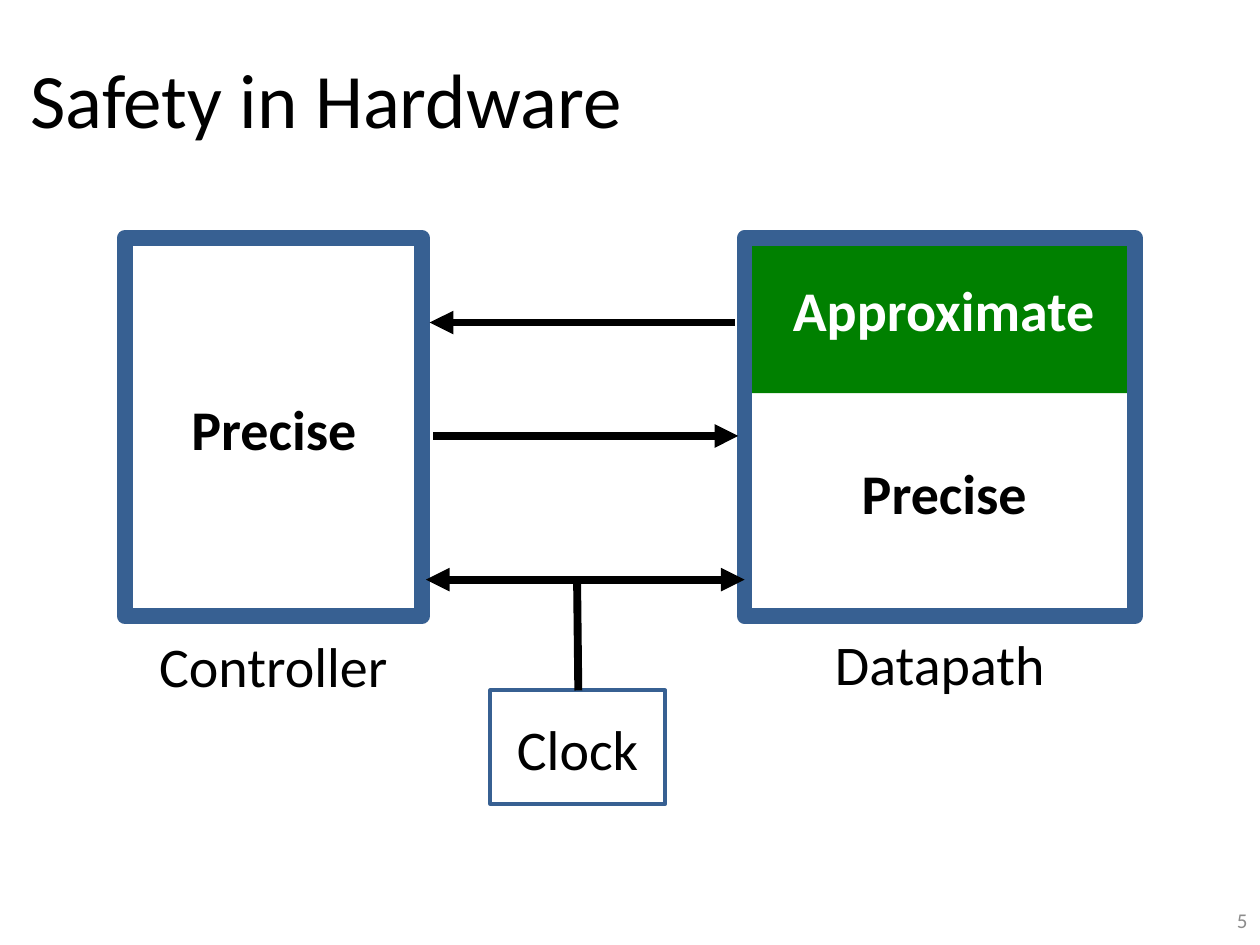
from pptx import Presentation
from pptx.dml.color import RGBColor
from pptx.enum.shapes import MSO_CONNECTOR, MSO_SHAPE
from pptx.enum.text import MSO_ANCHOR, PP_ALIGN
from pptx.oxml.ns import qn
from pptx.util import Pt
from lxml.etree import SubElement

PX = 9144
BLACK = RGBColor(0x00, 0x00, 0x00)
WHITE = RGBColor(0xFF, 0xFF, 0xFF)
GRAY = RGBColor(0x8C, 0x8C, 0x8C)
BLUE = RGBColor(0x37, 0x60, 0x92)
GREEN = RGBColor(0x00, 0x80, 0x00)


class Diagram:
    font = "Calibri"

    def __init__(self, slide):
        self.s = slide

    def fill_text(self, sp, text, size, color, align, anchor, bold=False, wrap=True):
        tf = sp.text_frame
        tf.word_wrap = wrap
        tf.vertical_anchor = anchor
        p = tf.paragraphs[0]
        p.alignment = align
        r = p.add_run()
        r.text = text
        r.font.name = self.font
        r.font.size = Pt(size)
        r.font.bold = bold
        r.font.color.rgb = color

    def title(self, text, x, y, w, h):
        sp = self.s.shapes.title
        sp.left, sp.top, sp.width, sp.height = (v * PX for v in (x, y, w, h))
        self.fill_text(sp, text, 44, BLACK, PP_ALIGN.LEFT, MSO_ANCHOR.MIDDLE)

    def text(self, text, x, y, w, h, size=32, color=BLACK, bold=False,
             align=PP_ALIGN.CENTER, anchor=MSO_ANCHOR.TOP, wrap=False):
        sp = self.s.shapes.add_textbox(x * PX, y * PX, w * PX, h * PX)
        self.fill_text(sp, text, size, color, align, anchor, bold, wrap)

    def box(self, x, y, w, h, fill=None, line=None):
        sp = self.s.shapes.add_shape(MSO_SHAPE.RECTANGLE, x * PX, y * PX, w * PX, h * PX)
        sp.shadow.inherit = False
        if fill is None:
            sp.fill.background()
        else:
            sp.fill.solid()
            sp.fill.fore_color.rgb = fill
        if line is None:
            sp.line.fill.background()
        else:
            sp.line.color.rgb = BLUE
            sp.line.width = Pt(line)

    def line(self, x1, y1, x2, y2, ends=()):
        sp = self.s.shapes.add_connector(
            MSO_CONNECTOR.STRAIGHT, x1 * PX, y1 * PX, x2 * PX, y2 * PX)
        sp.line.color.rgb = BLACK
        sp.line.width = Pt(4.5)
        spPr = sp._element.spPr
        ln = spPr.find(qn("a:ln"))
        for end in ends:
            SubElement(ln, qn(f"a:{end}"), type="triangle")
        SubElement(spPr, qn("a:effectLst"))


def main():
    prs = Presentation()
    prs.slide_width, prs.slide_height = 1000 * PX, 750 * PX
    d = Diagram(prs.slides.add_slide(prs.slide_layouts[5]))

    d.title("Safety in Hardware", 14, 15, 900, 125)
    d.text("5", 767, 710, 233, 40, size=12, color=GRAY,
           align=PP_ALIGN.RIGHT, anchor=MSO_ANCHOR.MIDDLE, wrap=True)

    d.box(591, 192, 310, 120, fill=GREEN)
    for name, x, w, name_x, name_y, name_w in (
        ("Controller", 99, 236, 115, 496, 204),
        ("Datapath", 591, 310, 651, 495, 190),
    ):
        d.box(x, 189, w, 300, line=9)
        d.text(name, name_x, name_y, name_w, 64)

    d.box(389, 548, 139, 90, line=2.25)
    d.text("Clock", 392, 562, 133, 64, wrap=True)

    d.line(338, 460, 591, 460, ("headEnd", "tailEnd"))
    d.line(344, 346, 586, 346, ("tailEnd",))
    d.line(459, 548, 458, 460)
    d.line(341, 256, 583, 256, ("headEnd",))

    for label, x, y, w, color in (
        ("Precise", 141, 308, 153, BLACK),
        ("Approximate", 617, 214, 264, WHITE),
        ("Precise", 673, 359, 153, BLACK),
    ):
        d.text(label, x, y, w, 64, color=color, bold=True)

    prs.save("out.pptx")


if __name__ == "__main__":
    main()
